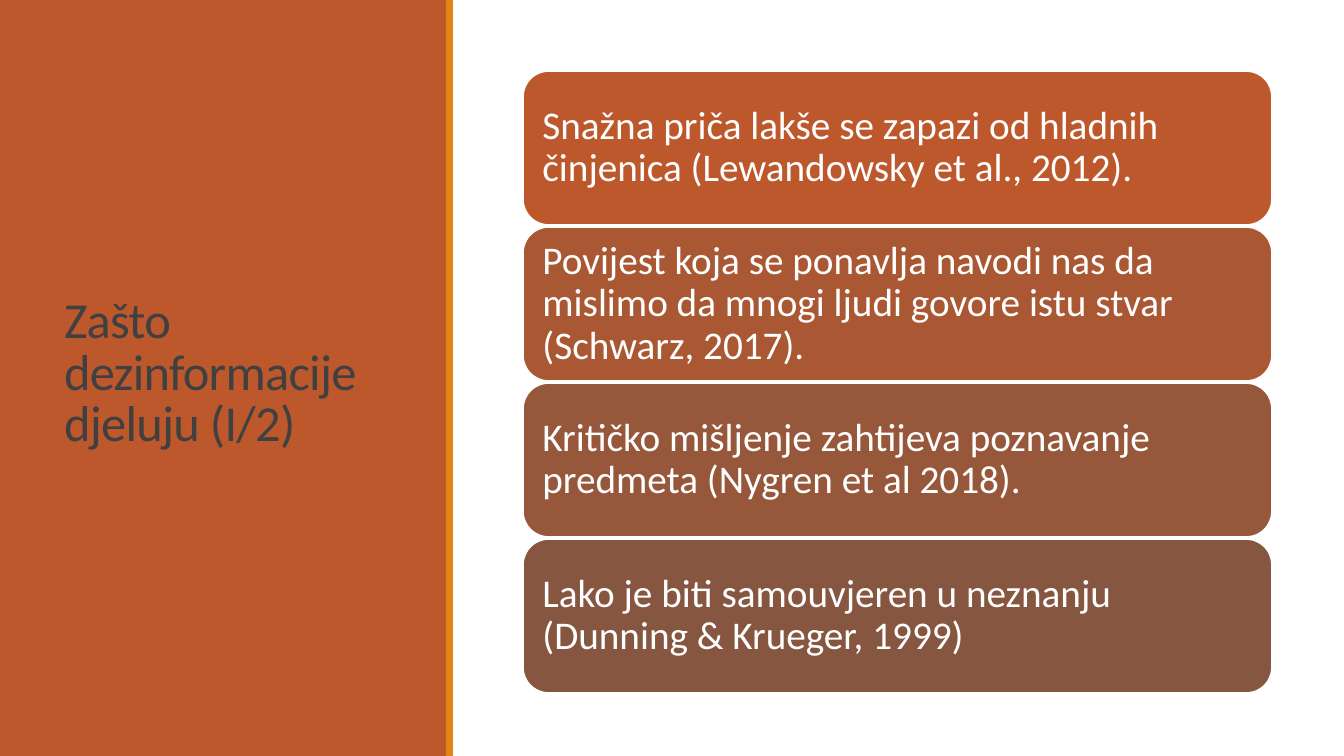
from pptx import Presentation
from pptx.dml.color import RGBColor as Rgb
from pptx.enum.shapes import MSO_SHAPE as Kind
from pptx.enum.text import MSO_ANCHOR as Anchor, MSO_AUTO_SIZE as Fit, PP_ALIGN as Align
from pptx.util import Pt

HEAD = "Zašto dezinformacije djeluju (I/2)"
CARDS = [
    ("Snažna priča lakše se zapazi od hladnih činjenica (Lewandowsky et al., 2012).", "rust"),
    ("Povijest koja se ponavlja navodi nas da mislimo da mnogi ljudi govore istu stvar (Schwarz, 2017).", "clay"),
    ("Kritičko mišljenje zahtijeva poznavanje predmeta (Nygren et al 2018).", "earth"),
    ("Lako je biti samouvjeren u neznanju (Dunning & Krueger, 1999)", "brown"),
]
HEX = {
    "rust": "BD582C", "clay": "AA5834", "earth": "97573A", "brown": "865640",
    "gold": "E48312", "white": "FFFFFF", "ink": "404040",
}
PX = 914400 / 100.8
WIDE, HIGH = 1344, 756
PANEL = (0, 0, 446, HIGH)
STRIPE = (446, 0, 7, HIGH)
TITLE = (54, 57, 340, 636)
LEFT, TOP, WIDTH, TALL, STEP = 523, 71, 749, 154, 156
INSET = 12


def emu(px):
    return round(px * PX)


def tint(name):
    return Rgb.from_string(HEX[name])


def assign(item, form):
    for key, val in form.items():
        setattr(item, key, val)


def place(item, box):
    assign(item, dict(zip(("left", "top", "width", "height"), map(emu, box))))


def block(slide, kind, box, fill, edge=None):
    shape = slide.shapes.add_shape(kind, *map(emu, box))
    shape.shadow.inherit = False
    shape.fill.solid()
    shape.fill.fore_color.rgb = tint(fill)
    if edge:
        shape.line.color.rgb = tint(edge)
        shape.line.width = Pt(1.25)
    else:
        shape.line.fill.background()
    return shape


def write(shape, text, size, color, space, inset=None):
    frame = shape.text_frame
    form = {"word_wrap": True, "auto_size": Fit.NONE, "vertical_anchor": Anchor.MIDDLE}
    if inset:
        form |= {f"margin_{side}": emu(inset) for side in ("left", "top", "right", "bottom")}
    assign(frame, form)
    para = frame.paragraphs[0]
    assign(para, {"alignment": Align.LEFT, "line_spacing": space})
    run = para.add_run()
    run.text = text
    assign(run.font, {"name": "Calibri", "size": Pt(size)})
    run.font.color.rgb = tint(color)
    return run


def main():
    deck = Presentation()
    assign(deck, {"slide_width": emu(WIDE), "slide_height": emu(HIGH)})
    slide = deck.slides.add_slide(deck.slide_layouts[5])
    block(slide, Kind.RECTANGLE, PANEL, "rust")
    title = slide.shapes.title
    slide.shapes._spTree.append(title._element)
    place(title, TITLE)
    run = write(title, HEAD, 36, "ink", 0.85)
    run._r.get_or_add_rPr().set("spc", "-50")
    block(slide, Kind.RECTANGLE, STRIPE, "gold")
    for row, (text, fill) in enumerate(CARDS):
        box = (LEFT, TOP + row * STEP, WIDTH, TALL)
        card = block(slide, Kind.ROUNDED_RECTANGLE, box, fill, "white")
        write(card, text, 28, "white", 0.9, INSET)
    deck.save("out.pptx")


if __name__ == "__main__":
    main()
